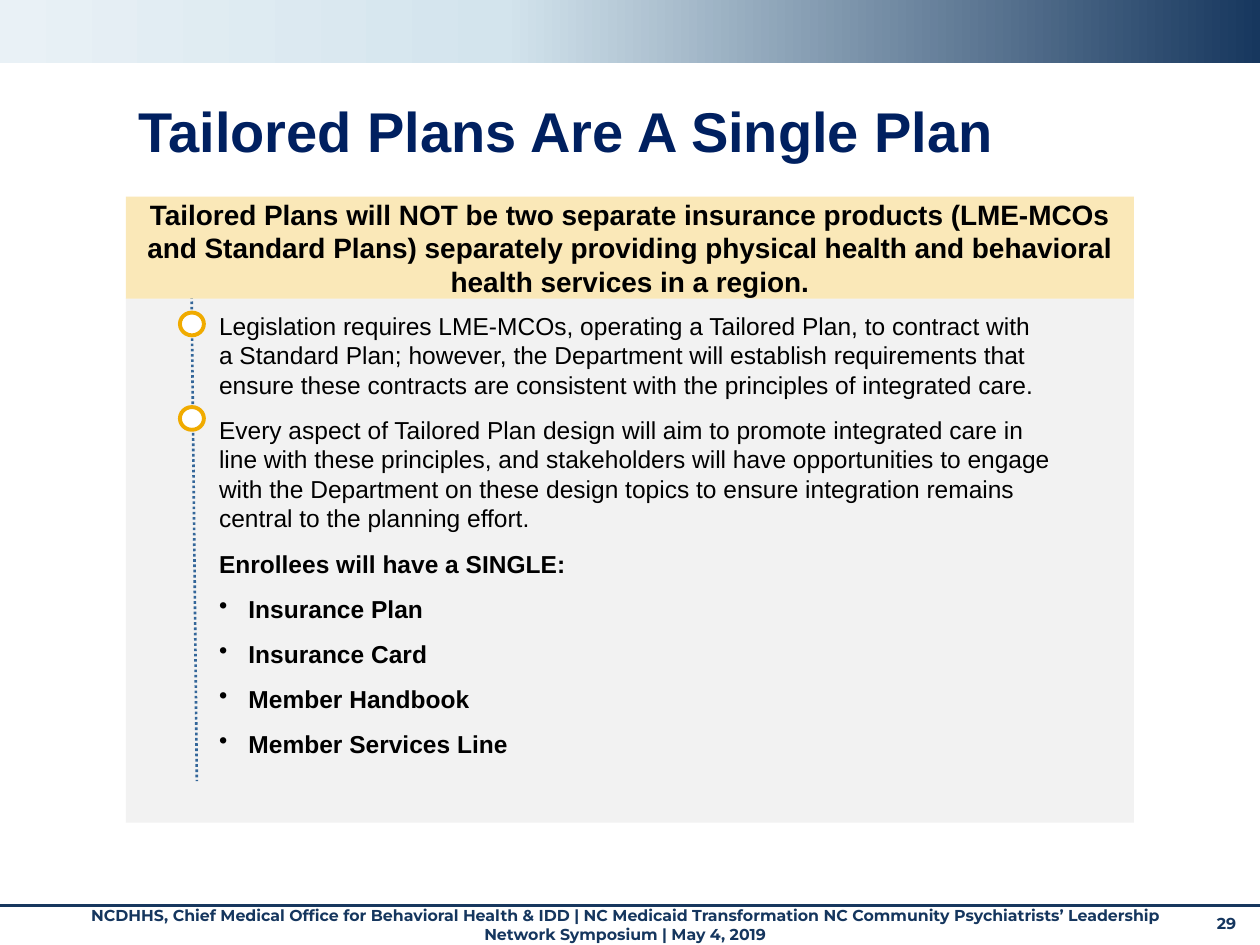
from copy import deepcopy
from dataclasses import dataclass

from pptx import Presentation
from pptx.dml.color import RGBColor
from pptx.enum.dml import MSO_LINE
from pptx.enum.shapes import MSO_CONNECTOR, MSO_SHAPE
from pptx.enum.text import MSO_ANCHOR, MSO_AUTO_SIZE, PP_ALIGN
from pptx.oxml.ns import qn
from pptx.util import Pt


@dataclass(frozen=True)
class Theme:
    font: str = "Arial"
    footer_font: str = "Montserrat"
    title_size: int = 32
    banner_size: int = 16
    body_size: int = 14
    footer_size: int = 9
    title: str = "002060"
    text: str = "000000"
    footer: str = "15365E"
    navy: str = "17375E"
    header_mid: str = "D3E4ED"
    header_light: str = "E9F1F6"
    panel: str = "F2F2F2"
    banner: str = "FAE8B8"
    dots: str = "336699"
    ring: str = "F0AB00"
    white: str = "FFFFFF"


THEME = Theme()

FOOTER = (
    "NCDHHS, Chief Medical Office for Behavioral Health & IDD | NC Medicaid "
    "Transformation NC Community Psychiatrists’ Leadership Network Symposium | May 4, 2019"
)
BANNER = (
    "Tailored Plans will NOT be two separate insurance products (LME-MCOs and Standard "
    "Plans) separately providing physical health and behavioral health services in a region."
)
POINTS = [
    "Legislation requires LME-MCOs, operating a Tailored Plan, to contract with a Standard "
    "Plan; however, the Department will establish requirements that ensure these contracts "
    "are consistent with the principles of integrated care.",
    "Every aspect of Tailored Plan design will aim to promote integrated care in line with "
    "these principles, and stakeholders will have opportunities to engage with the Department "
    "on these design topics to ensure integration remains central to the planning effort.",
]
LEAD_IN = "Enrollees will have a SINGLE:"
BENEFITS = ["Insurance Plan", "Insurance Card", "Member Handbook", "Member Services Line"]


def rgb(value):
    return RGBColor.from_string(value)


def write(p, text, size, color, font=THEME.font, bold=True, align=None, after=None):
    p.text = text
    p.alignment = align
    if after is not None:
        p.space_after = Pt(after)
    f = p.runs[0].font
    f.name, f.size, f.bold = font, Pt(size), bold
    f.color.rgb = rgb(color)


def add_bullet(p, indent):
    pPr = p._p.get_or_add_pPr()
    pPr.set("marL", str(Pt(indent)))
    pPr.set("indent", str(-Pt(indent)))
    bu = pPr.makeelement(qn("a:buChar"), {"char": "•"})
    pPr.append(bu)


def add_text_box(s, *box):
    tf = s.shapes.add_textbox(*map(Pt, box)).text_frame
    tf.word_wrap = True
    return tf


def add_block(s, kind, box, fill=None, line=None, width=0):
    sp = s.shapes.add_shape(kind, *map(Pt, box))
    sp.shadow.inherit = False
    if fill:
        sp.fill.solid()
        sp.fill.fore_color.rgb = rgb(fill)
    if line:
        sp.line.color.rgb = rgb(line)
        sp.line.width = Pt(width)
    else:
        sp.line.fill.background()
    return sp


def add_header(s):
    sp = add_block(s, MSO_SHAPE.RECTANGLE, (0, 0, 720, 36))
    sp.fill.gradient()
    sp.fill.gradient_angle = 180
    stops = sp._element.spPr.find(qn("a:gradFill")).find(qn("a:gsLst"))
    stops.append(deepcopy(stops[-1]))
    colors = (THEME.navy, THEME.header_mid, THEME.header_light)
    for stop, position, color in zip(sp.fill.gradient_stops, (0, 0.6, 1), colors):
        stop.position = position
        stop.color.rgb = rgb(color)


def add_line(s, ends, color, width, dash=None):
    ln = s.shapes.add_connector(MSO_CONNECTOR.STRAIGHT, *map(Pt, ends))
    ln.line.color.rgb = rgb(color)
    ln.line.width = Pt(width)
    if dash:
        ln.line.dash_style = dash
    spPr = ln._element.spPr
    spPr.append(spPr.makeelement(qn("a:effectLst"), {}))


def add_footer(s):
    boxes = [
        (FOOTER, (36, 514.1, 642.2, 26.6), PP_ALIGN.CENTER),
        ("29", (688.3, 518.4, 31.7, 21.6), None),
    ]
    for text, box, align in boxes:
        tf = add_text_box(s, *box)
        write(tf.paragraphs[0], text, THEME.footer_size, THEME.footer,
              font=THEME.footer_font, align=align)


def add_title(s):
    p = add_text_box(s, 72, 56.2, 558, 58.3).paragraphs[0]
    write(p, "Tailored Plans Are A Single Plan", THEME.title_size, THEME.title)
    p.line_spacing = 0.9


def add_banner(s):
    sp = add_block(s, MSO_SHAPE.RECTANGLE, (72, 112.3, 576, 58.3), THEME.banner)
    tf = sp.text_frame
    tf.word_wrap = True
    tf.vertical_anchor = MSO_ANCHOR.MIDDLE
    tf.margin_left = tf.margin_right = Pt(5.76)
    tf.margin_top = tf.margin_bottom = Pt(2.88)
    write(tf.paragraphs[0], BANNER, THEME.banner_size, THEME.text,
          align=PP_ALIGN.CENTER, after=4.5)


def add_body(s):
    tf = add_text_box(s, 118.1, 174.2, 489.6, 265.7)
    tf.auto_size = MSO_AUTO_SIZE.SHAPE_TO_FIT_TEXT
    for i, text in enumerate([*POINTS, LEAD_IN, *BENEFITS]):
        p = tf.add_paragraph() if i else tf.paragraphs[0]
        write(p, text, THEME.body_size, THEME.text, bold=text not in POINTS, after=9)
        if text in BENEFITS:
            add_bullet(p, 16.8)


def main():
    prs = Presentation()
    prs.slide_width, prs.slide_height = Pt(720), Pt(540)
    s = prs.slides.add_slide(prs.slide_layouts[6])
    add_footer(s)
    add_header(s)
    add_line(s, (0, 517.5, 720, 517.5), THEME.navy, 1.75)
    add_block(s, MSO_SHAPE.RECTANGLE, (72, 170.6, 576, 299.5), THEME.panel)
    add_line(s, (109.5, 166.3, 112.5, 446.4), THEME.dots, 1.5, MSO_LINE.ROUND_DOT)
    for top in (178.6, 232.6):
        add_block(s, MSO_SHAPE.OVAL, (102.8, top, 13.7, 13), THEME.white, THEME.ring, 2.25)
    add_title(s)
    add_banner(s)
    add_body(s)
    prs.save("out.pptx")


if __name__ == "__main__":
    main()
